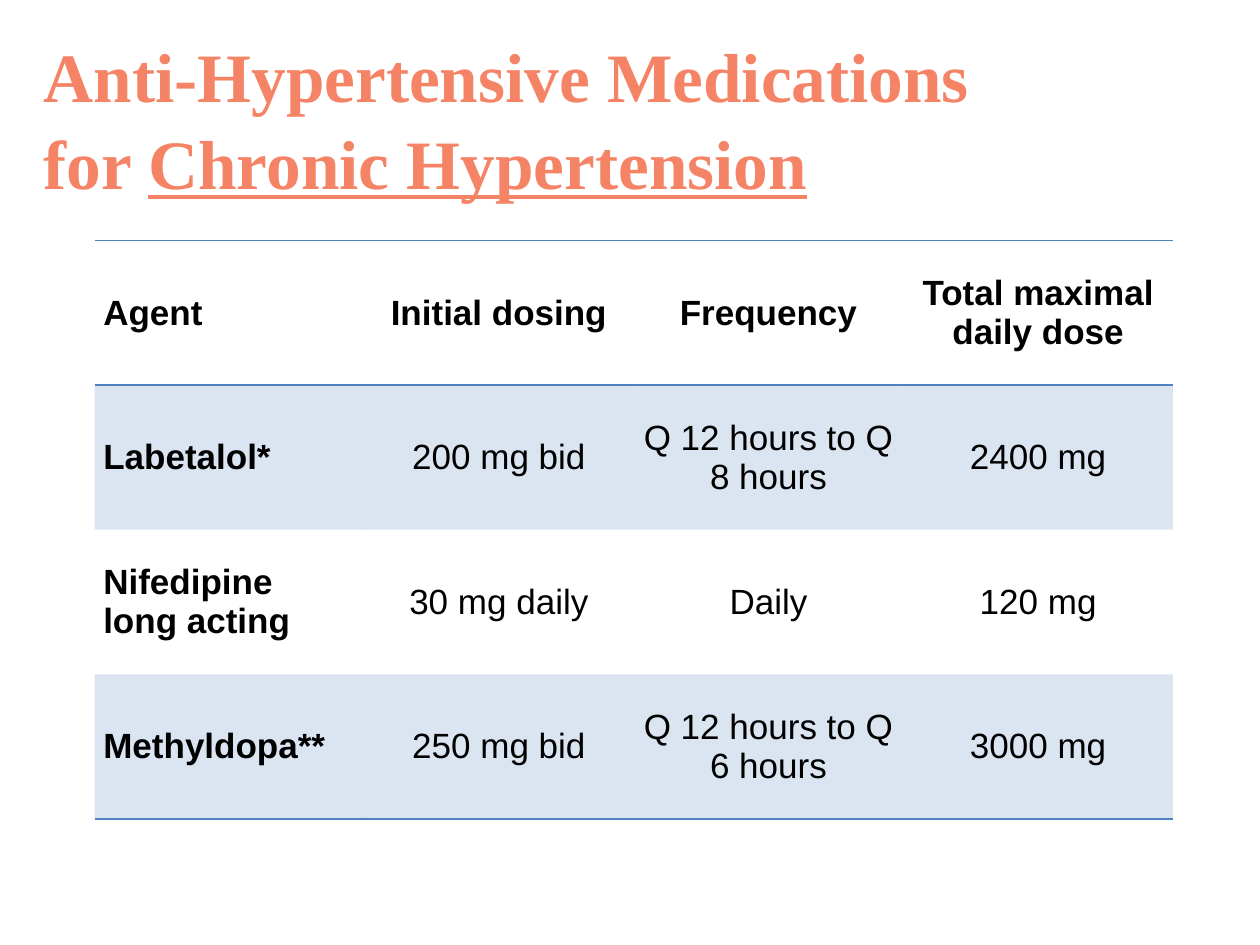
from dataclasses import dataclass

from lxml import etree
from pptx import Presentation
from pptx.dml.color import RGBColor
from pptx.enum.text import MSO_ANCHOR, PP_ALIGN
from pptx.oxml.ns import qn
from pptx.util import Inches, Pt

MIDDLE = MSO_ANCHOR.MIDDLE
LEFT, CENTER = PP_ALIGN.LEFT, PP_ALIGN.CENTER
PX_PER_INCH = 100
BLANK_LAYOUT = 6
NO_STYLE_NO_GRID = "{2D5ABB26-0587-4C30-8999-92F81FD0307C}"


@dataclass(frozen=True)
class Theme:
    title_color: str = "F58466"
    text_color: str = "000000"
    accent: str = "4F81BD"
    band_alpha: int = 20
    title_font: str = "Times New Roman"
    body_font: str = "Arial"
    title_size: float = 39.6
    body_size: float = 20
    title_spacing: float = 1.04
    rule_width: float = 1


@dataclass(frozen=True)
class Box:
    left: int
    top: int
    width: int
    height: int

    def emu(self) -> list[int]:
        return [px(n) for n in (self.left, self.top, self.width, self.height)]


@dataclass(frozen=True)
class Medication:
    agent: str
    initial_dosing: str
    frequency: str
    maximal_dose: str

    def cells(self) -> tuple[str, ...]:
        return self.agent, self.initial_dosing, self.frequency, self.maximal_dose


THEME = Theme()
TITLE_BOX = Box(25, 30, 900, 125)
TABLE_BOX = Box(75, 191, 856, 459)
HEADINGS = Medication("Agent", "Initial dosing", "Frequency", "Total maximal daily dose")
MEDICATIONS = [
    Medication("Labetalol*", "200 mg bid", "Q 12 hours to Q 8 hours", "2400 mg"),
    Medication("Nifedipine long acting", "30 mg daily", "Daily", "120 mg"),
    Medication("Methyldopa**", "250 mg bid", "Q 12 hours to Q 6 hours", "3000 mg"),
]


def px(length: int) -> int:
    return Inches(length / PX_PER_INCH)


def add_run(paragraph, text: str, font: str, size: float, color: str,
            bold: bool, underline: bool = False) -> None:
    run = paragraph.add_run()
    run.text = text
    run.font.name = font
    run.font.size = Pt(size)
    run.font.color.rgb = RGBColor.from_string(color)
    run.font.bold = bold
    if underline:
        run.font.underline = True


def add_title(slide) -> None:
    frame = slide.shapes.add_textbox(*TITLE_BOX.emu()).text_frame
    frame.word_wrap = True
    frame.vertical_anchor = MIDDLE
    paragraph = frame.paragraphs[0]
    paragraph.line_spacing = THEME.title_spacing
    style = (THEME.title_font, THEME.title_size, THEME.title_color, True)
    add_run(paragraph, "Anti-Hypertensive Medications", *style)
    paragraph.add_line_break()
    add_run(paragraph, "for ", *style)
    add_run(paragraph, "Chronic Hypertension", *style, underline=True)


def add_rule(cell, side: str) -> None:
    """Draw a cell border; side is lnT or lnB. Must come before the fill."""
    line = etree.SubElement(cell._tc.get_or_add_tcPr(), qn(f"a:{side}"),
                            w=str(Pt(THEME.rule_width)))
    fill = etree.SubElement(line, qn("a:solidFill"))
    etree.SubElement(fill, qn("a:srgbClr"), val=THEME.accent)


def fill_band(cell) -> None:
    cell.fill.solid()
    cell.fill.fore_color.rgb = RGBColor.from_string(THEME.accent)
    color = cell._tc.tcPr.find(f"{qn('a:solidFill')}/{qn('a:srgbClr')}")
    etree.SubElement(color, qn("a:alpha"), val=str(THEME.band_alpha * 1000))


def write_cell(cell, text: str, bold: bool, alignment) -> None:
    cell.vertical_anchor = MIDDLE
    cell.margin_left = cell.margin_right = px(7)
    cell.margin_top = cell.margin_bottom = 0
    paragraph = cell.text_frame.paragraphs[0]
    paragraph.alignment = alignment
    add_run(paragraph, text, THEME.body_font, THEME.body_size, THEME.text_color, bold)


def add_medication_table(slide) -> None:
    rows = [HEADINGS, *MEDICATIONS]
    last_row = len(rows) - 1
    table = slide.shapes.add_table(len(rows), len(HEADINGS.cells()),
                                   *TABLE_BOX.emu()).table
    table.horz_banding = False
    table._tbl.tblPr.find(qn("a:tableStyleId")).text = NO_STYLE_NO_GRID
    for r, medication in enumerate(rows):
        for c, text in enumerate(medication.cells()):
            cell = table.cell(r, c)
            write_cell(cell, text, r == 0 or c == 0, LEFT if c == 0 else CENTER)
            if r == 0:
                add_rule(cell, "lnT")
            if r in (0, last_row):
                add_rule(cell, "lnB")
            if r % 2:
                fill_band(cell)
            else:
                cell.fill.background()


def main() -> None:
    deck = Presentation()
    deck.slide_width, deck.slide_height = px(1000), px(750)
    slide = deck.slides.add_slide(deck.slide_layouts[BLANK_LAYOUT])
    add_title(slide)
    add_medication_table(slide)
    deck.save("out.pptx")


if __name__ == "__main__":
    main()
